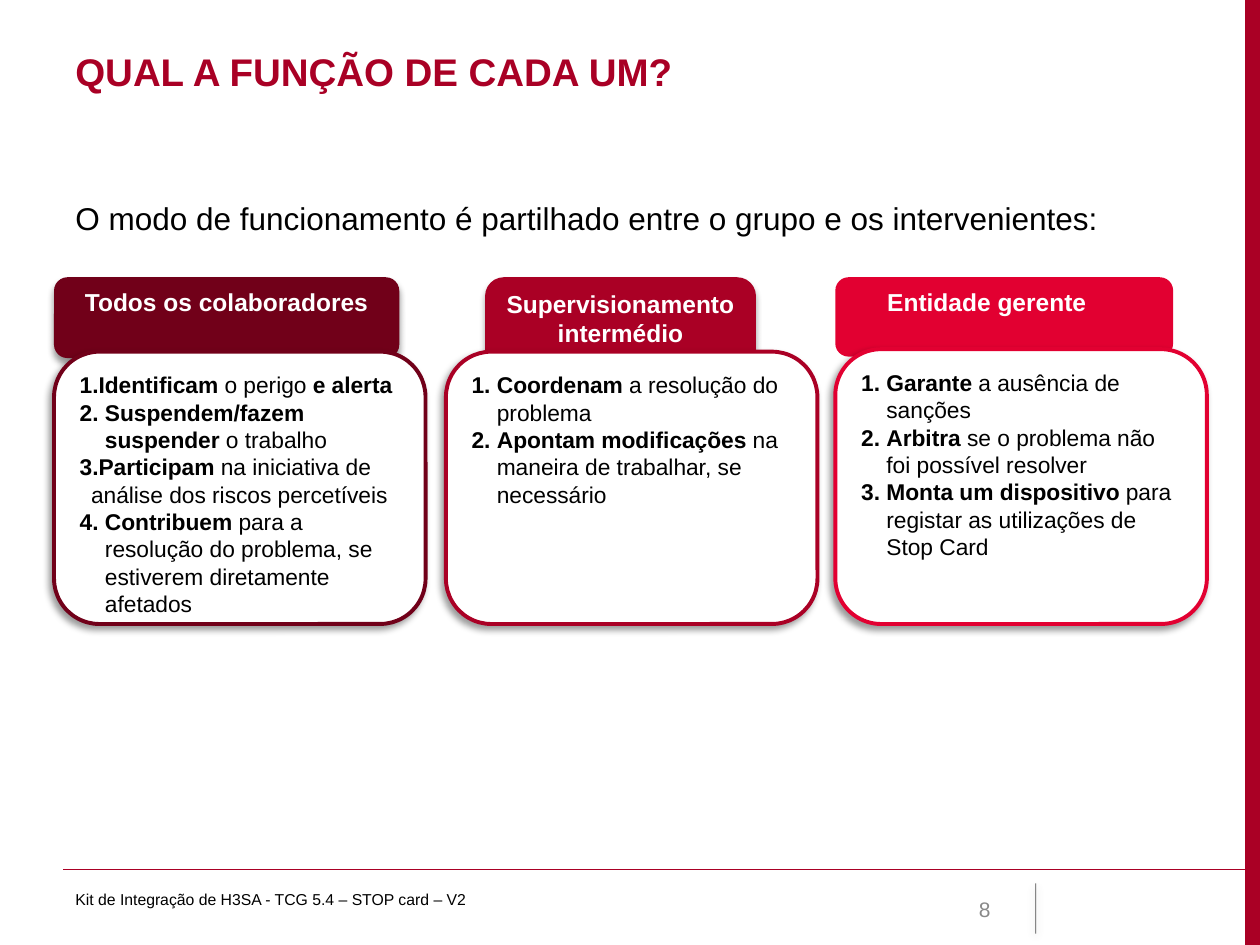
from dataclasses import dataclass

from lxml import etree
from pptx import Presentation
from pptx import util as u
from pptx.dml.color import RGBColor
from pptx.enum import shapes, text
from pptx.oxml.ns import qn

WINE = RGBColor(0x71, 0x00, 0x19)
RED = RGBColor(0xAA, 0x00, 0x25)
BRIGHT = RGBColor(0xE2, 0x00, 0x31)
TITLE = RGBColor(0xA9, 0x00, 0x25)
GREY = RGBColor(0x89, 0x89, 0x89)
BLACK = RGBColor(0, 0, 0)
WHITE = RGBColor(0xFF, 0xFF, 0xFF)

KIND = shapes.MSO_SHAPE
ALIGN = text.PP_ALIGN
WIDE, TIGHT = 0.51, 0.23  # hanging indents in cm


@dataclass
class Box:
    x: float
    y: float
    w: float
    h: float

    def cm(self) -> list:
        return [u.Cm(v) for v in (self.x, self.y, self.w, self.h)]


@dataclass
class Label:
    box: Box
    words: str
    size: int
    color: RGBColor = BLACK
    bold: bool = False
    align: ALIGN = ALIGN.LEFT
    anchor: text.MSO_ANCHOR = text.MSO_ANCHOR.TOP


@dataclass
class Item:
    words: str  # parts between asterisks are bold
    hang: float = WIDE


@dataclass
class Role:
    color: RGBColor
    kind: KIND
    head: Box
    name: list[str]
    body: Box
    items: list[Item]
    shade: bool = True
    right: float = 0.25  # right inset of the heading


def style(font, size: int, color: RGBColor, bold: bool) -> None:
    look = {"name": "Arial", "size": u.Pt(size), "bold": bold}
    for key, value in look.items():
        setattr(font, key, value)
    font.color.rgb = color


def shadow(shape, alpha: int = 40, blur: float = 4, dist: float = 3,
           angle: int = 90) -> None:
    props = shape._element.spPr
    for old in props.findall(qn("a:effectLst")):
        props.remove(old)
    effects = etree.SubElement(props, qn("a:effectLst"))
    outer = etree.SubElement(
        effects, qn("a:outerShdw"), blurRad=str(u.Pt(blur)),
        dist=str(u.Pt(dist)), dir=str(angle * 60000), rotWithShape="0")
    tint = etree.SubElement(outer, qn("a:srgbClr"), val="000000")
    etree.SubElement(tint, qn("a:alpha"), val=str(alpha * 1000))


def block(slide, kind: KIND, box: Box, fill: RGBColor, edge=None):
    shape = slide.shapes.add_shape(kind, *box.cm())
    shape.shadow.inherit = False
    shape.fill.solid()
    shape.fill.fore_color.rgb = fill
    if edge is None:
        shape.line.fill.background()
    else:
        shape.line.color.rgb = edge
        shape.line.width = u.Pt(2.25)
    frame = shape.text_frame
    frame.word_wrap = True
    frame.vertical_anchor = text.MSO_ANCHOR.TOP
    return shape


def rule(slide, ends: tuple, color: RGBColor, width: float):
    line = slide.shapes.add_connector(
        shapes.MSO_CONNECTOR.STRAIGHT, *[u.Cm(v) for v in ends])
    line.line.color.rgb = color
    line.line.width = u.Pt(width)
    etree.SubElement(line._element.spPr, qn("a:effectLst"))
    return line


def write(slide, label: Label) -> None:
    frame = slide.shapes.add_textbox(*label.box.cm()).text_frame
    frame.word_wrap = True
    frame.vertical_anchor = label.anchor
    para = frame.paragraphs[0]
    para.alignment = label.align
    run = para.add_run()
    run.text = label.words
    style(run.font, label.size, label.color, label.bold)


def lines(frame, count: int) -> list:
    return [frame.paragraphs[0]] + [frame.add_paragraph()
                                    for _ in range(count - 1)]


def number(para, hang: float) -> None:
    props = para._p.get_or_add_pPr()
    props.set("marL", str(u.Cm(hang)))
    props.set("indent", str(-u.Cm(hang)))
    etree.SubElement(props, qn("a:buFont"), typeface="+mj-lt")
    etree.SubElement(props, qn("a:buAutoNum"), type="arabicPeriod")


def column(slide, role: Role) -> None:
    # Heading
    head = block(slide, role.kind, role.head, role.color)
    if role.shade:
        shadow(head)
    head.text_frame.margin_right = u.Cm(role.right)
    for para, words in zip(lines(head.text_frame, len(role.name)), role.name):
        para.alignment = ALIGN.CENTER
        run = para.add_run()
        run.text = words
        style(run.font, 14, WHITE, True)

    # Numbered tasks
    body = block(slide, KIND.ROUNDED_RECTANGLE, role.body, WHITE, role.color)
    shadow(body, angle=135)
    for para, item in zip(lines(body.text_frame, len(role.items)), role.items):
        para.alignment = ALIGN.LEFT
        number(para, item.hang)
        for i, part in enumerate(item.words.split("*")):
            if part:
                run = para.add_run()
                run.text = part
                style(run.font, 13, BLACK, i % 2 == 1)


ROLES = [
    Role(WINE, KIND.FLOWCHART_ALTERNATE_PROCESS, Box(1.09, 5.59, 6.96, 1.63),
         ["Todos os colaboradores"], Box(1.09, 7.09, 7.49, 5.49), [
        Item("*Identificam* o perigo *e alerta*", TIGHT),
        Item("*Suspendem/fazem suspender* o trabalho"),
        Item("*Participam* na iniciativa de análise dos riscos percetíveis",
             TIGHT),
        Item("*Contribuem* para a resolução do problema, "
             "se estiverem diretamente afetados")]),
    Role(RED, KIND.ROUNDED_RECTANGLE, Box(9.78, 5.59, 5.46, 2.26),
         ["Supervisionamento", "intermédio"], Box(8.99, 7.09, 7.49, 5.49), [
        Item("*Coordenam *a resolução do problema"),
        Item("*Apontam modificações* na maneira de trabalhar, "
             "se necessário")]),
    Role(BRIGHT, KIND.ROUNDED_RECTANGLE, Box(16.84, 5.59, 6.81, 1.6),
         ["Entidade gerente"], Box(16.84, 7.04, 7.49, 5.54), [
        Item("*Garante* a ausência de sanções"),
        Item("*Arbitra* se o problema não foi possível resolver"),
        Item("*Monta um dispositivo *para registar as utilizações "
             "de Stop Card")], shade=False, right=0.95),
]

LABELS = [
    Label(Box(1.27, 0.84, 22.83, 1.75), "QUAL A FUNÇÃO DE CADA UM?", 22,
          TITLE, True),
    Label(Box(1.27, 3.89, 23.09, 1.02), "O modo de funcionamento é partilhado "
          "entre o grupo e os intervenientes:", 18),
    Label(Box(1.27, 17.81, 15.44, 1.02),
          "Kit de Integração de H3SA - TCG 5.4 – STOP card – V2", 9),
    Label(Box(18.21, 17.81, 2.01, 1.02), "8", 12, GREY, align=ALIGN.RIGHT,
          anchor=text.MSO_ANCHOR.MIDDLE),
]


def main() -> None:
    deck = Presentation()
    deck.slide_width, deck.slide_height = u.Cm(25.4), u.Cm(19.05)
    slide = deck.slides.add_slide(deck.slide_layouts[6])

    # Side band and footer rules
    block(slide, KIND.RECTANGLE, Box(25.1, 0, 0.3, 19.05), RED)
    rule(slide, (1.27, 17.53, 25.4, 17.53), RED, 0.75)
    mark = rule(slide, (20.88, 17.81, 20.88, 18.82), BLACK, 0.5)
    tint = mark._element.spPr.find(".//" + qn("a:srgbClr"))
    etree.SubElement(tint, qn("a:alpha"), val="70000")
    shadow(mark, 38, 5, 1.6)

    # Columns and plain text
    for role in ROLES:
        column(slide, role)
    for label in LABELS:
        write(slide, label)
    deck.save("out.pptx")


if __name__ == "__main__":
    main()
